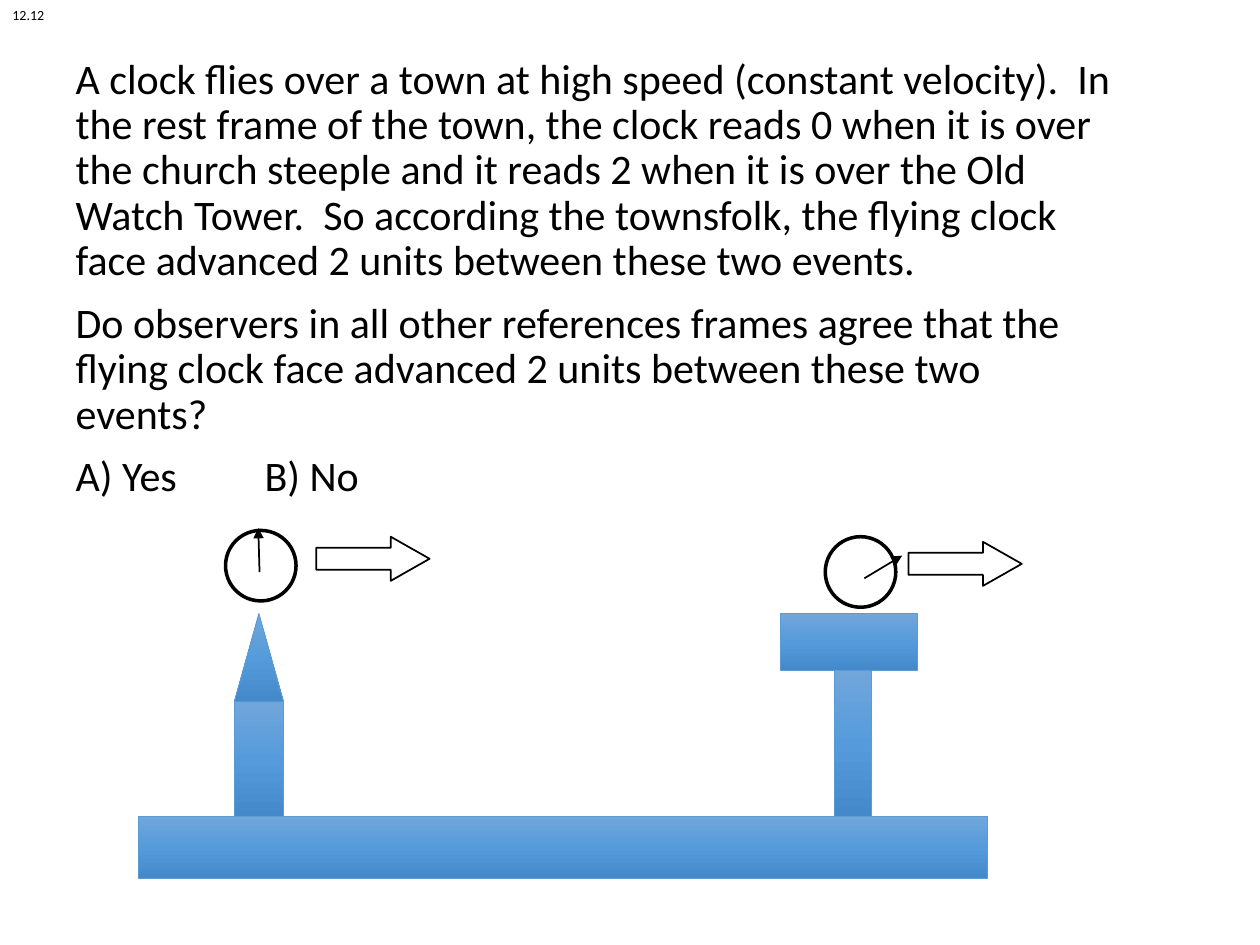
import copy
from dataclasses import dataclass
from typing import Optional

import pptx
import pptx.dml.color
import pptx.enum.dml
import pptx.enum.shapes
import pptx.enum.text
import pptx.oxml
import pptx.oxml.ns
import pptx.slide
import pptx.text.text
import pptx.util
from lxml import etree

Inches = pptx.util.Inches
Pt = pptx.util.Pt
RGBColor = pptx.dml.color.RGBColor
Kind = pptx.enum.shapes.MSO_SHAPE
qn = pptx.oxml.ns.qn

BLACK = RGBColor(0x00, 0x00, 0x00)
EDGE = RGBColor(0x5B, 0x9B, 0xD5)
LIGHT = RGBColor(0x71, 0xA6, 0xDB)
MIDDLE = RGBColor(0x55, 0x9B, 0xDB)
DARK = RGBColor(0x44, 0x8A, 0xCA)
FONT = "Calibri"

QUESTION = (
    "A clock flies over a town at high speed (constant velocity).  In the rest "
    "frame of the town, the clock reads 0 when it is over the church steeple and "
    "it reads 2 when it is over the Old Watch Tower.  So according the townsfolk, "
    "the flying clock face advanced 2 units between these two events.",
    "Do observers in all other references frames agree that the flying clock face "
    "advanced 2 units between these two events?",
    "A) Yes\t\tB) No",
)


@dataclass(frozen=True)
class Block:
    kind: Kind
    left: float
    top: float
    width: float
    height: float


@dataclass(frozen=True)
class Clock:
    left: float
    top: float
    hand: tuple[float, float, float, float]
    arrow: tuple[float, float]


GROUND = 6.48
ROOF = 4.87
BLOCKS = (
    Block(Kind.RECTANGLE, 1.86, 5.57, 0.39, GROUND - 5.57),
    Block(Kind.ISOSCELES_TRIANGLE, 1.86, ROOF, 0.39, 0.7),
    Block(Kind.RECTANGLE, 6.62, 5.32, 0.3, GROUND - 5.32),
    Block(Kind.RECTANGLE, 6.19, ROOF, 1.09, 0.45),
    Block(Kind.RECTANGLE, 1.1, GROUND, 6.74, 0.49),
)
CLOCKS = (
    Clock(1.79, 4.21, (2.06, 4.54, 2.05, 4.19), (2.51, 4.26)),
    Clock(6.55, 4.26, (6.86, 4.59, 7.16, 4.41), (7.21, 4.3)),
)


def add_run(par: pptx.text.text._Paragraph, text: str, size: float) -> None:
    run = par.add_run()
    run.text = text
    run.font.name = FONT
    run.font.size = Pt(size)
    run.font.color.rgb = BLACK


def add_body(slide: pptx.slide.Slide) -> None:
    title = slide.shapes.title
    title.element.getparent().remove(title.element)
    body = slide.placeholders[1]
    body.left, body.top = Inches(0.5), Inches(0.41)
    body.width, body.height = Inches(8.46), Inches(3.74)
    frame = body.text_frame
    frame.word_wrap = True
    frame.auto_size = pptx.enum.text.MSO_AUTO_SIZE.NONE
    frame.vertical_anchor = pptx.enum.text.MSO_ANCHOR.TOP
    for index, text in enumerate(QUESTION):
        par = frame.add_paragraph() if index else frame.paragraphs[0]
        par.line_spacing = 0.9
        par.space_before = Pt(10)
        add_run(par, text, 24)
        props = par._p.get_or_add_pPr()
        props.set("marL", "0")
        props.set("indent", "0")
        etree.SubElement(props, qn("a:buNone"))
        tabs = etree.SubElement(props, qn("a:tabLst"))
        etree.SubElement(tabs, qn("a:tab"), pos=str(Inches(1.19)), algn="l")


def add_block(slide: pptx.slide.Slide, block: Block, color: RGBColor,
              weight: float, stops: Optional[tuple[RGBColor, ...]] = None):
    shape = slide.shapes.add_shape(
        block.kind, Inches(block.left), Inches(block.top),
        Inches(block.width), Inches(block.height))
    shape.shadow.inherit = False
    shape.line.color.rgb = color
    shape.line.width = Pt(weight)
    if stops is None:
        shape.fill.background()
        return shape
    shape.fill.gradient()
    shape.fill.gradient_angle = 270
    first = next(shape.element.iter(qn("a:gs")))
    first.addnext(copy.deepcopy(first))
    for index, stop in enumerate(shape.fill.gradient_stops):
        stop.color.rgb = stops[index]
        stop.position = index / (len(stops) - 1)
    return shape


def add_hand(slide: pptx.slide.Slide, ends: tuple[float, float, float, float]) -> None:
    line = slide.shapes.add_connector(
        pptx.enum.shapes.MSO_CONNECTOR.STRAIGHT, *map(Inches, ends))
    line.line.color.rgb = BLACK
    line.line.width = Pt(1)
    props = line.element.spPr
    etree.SubElement(props.find(qn("a:ln")), qn("a:tailEnd"), type="triangle")
    etree.SubElement(props, qn("a:effectLst"))


def add_clock(slide: pptx.slide.Slide, clock: Clock) -> None:
    add_block(slide, Block(Kind.OVAL, clock.left, clock.top, 0.56, 0.56), BLACK, 2)
    add_hand(slide, clock.hand)
    arrow = add_block(slide, Block(Kind.RIGHT_ARROW, *clock.arrow, 0.9, 0.35), BLACK, 1)
    arrow.adjustments[0] = 0.5
    arrow.adjustments[1] = 0.88


def add_label(slide: pptx.slide.Slide, text: str) -> None:
    box = slide.shapes.add_textbox(0, 0, Inches(0.46), Inches(0.24))
    box.text_frame.word_wrap = False
    box.text_frame.auto_size = pptx.enum.text.MSO_AUTO_SIZE.SHAPE_TO_FIT_TEXT
    add_run(box.text_frame.paragraphs[0], text, 8)


def main() -> None:
    deck = pptx.Presentation()
    deck.slide_width, deck.slide_height = Inches(10), Inches(7.5)
    slide = deck.slides.add_slide(deck.slide_layouts[1])
    add_body(slide)
    for block in BLOCKS:
        add_block(slide, block, EDGE, 0.5, (LIGHT, MIDDLE, DARK))
    for clock in CLOCKS:
        add_clock(slide, clock)
    add_label(slide, "12.12")
    deck.save("out.pptx")


if __name__ == "__main__":
    main()
